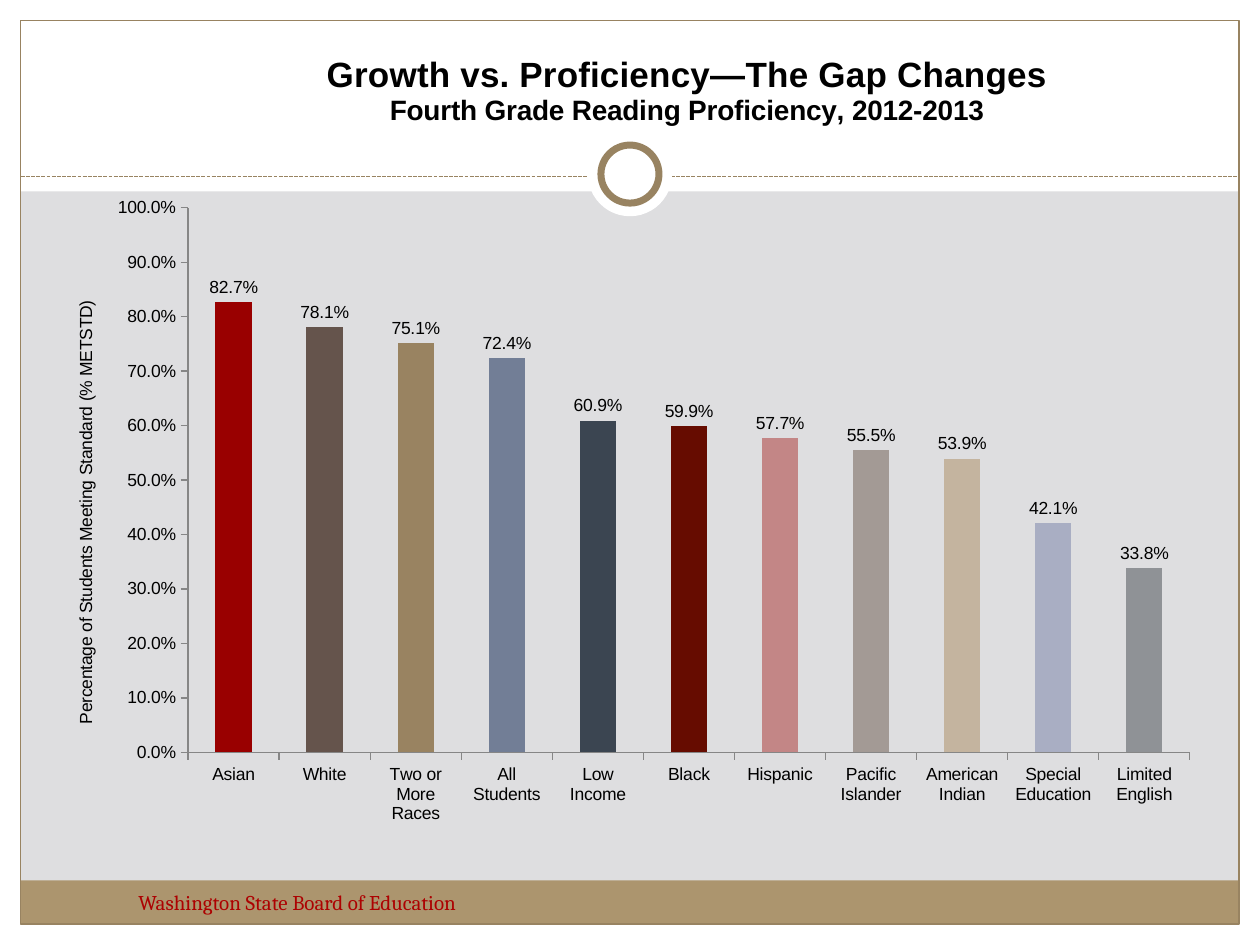
from lxml import etree
from pptx import Presentation
from pptx.chart.data import CategoryChartData
from pptx.dml.color import RGBColor
from pptx.enum.chart import XL_CHART_TYPE, XL_LABEL_POSITION, XL_TICK_MARK
from pptx.enum.dml import MSO_LINE
from pptx.enum.shapes import MSO_CONNECTOR, MSO_SHAPE
from pptx.oxml import parse_xml
from pptx.oxml.ns import nsdecls, qn
from pptx.util import Cm, Pt

RECTANGLE, OVAL = MSO_SHAPE.RECTANGLE, MSO_SHAPE.OVAL
STRAIGHT = MSO_CONNECTOR.STRAIGHT
DASHED = MSO_LINE.SQUARE_DOT
COLUMNS = XL_CHART_TYPE.COLUMN_CLUSTERED
ABOVE_BAR = XL_LABEL_POSITION.OUTSIDE_END
OUTWARD, NO_TICK = XL_TICK_MARK.OUTSIDE, XL_TICK_MARK.NONE

HEADING = "Growth vs. Proficiency—The Gap Changes"
SUBHEADING = "Fourth Grade Reading Proficiency, 2012-2013"
AXIS_CAPTION = "Percentage of Students Meeting Standard (% METSTD)"
FOOTER = "Washington State Board of Education"
GROUPS = [
    ("Asian", 0.827, "990000"),
    ("White", 0.781, "65544C"),
    ("Two or More Races", 0.751, "998361"),
    ("All Students", 0.724, "727E96"),
    ("Low Income", 0.609, "3B4551"),
    ("Black", 0.599, "660C00"),
    ("Hispanic", 0.577, "C38686"),
    ("Pacific Islander", 0.555, "A39A95"),
    ("American Indian", 0.539, "C4B49F"),
    ("Special Education", 0.421, "A9AEC3"),
    ("Limited English", 0.338, "8F9296"),
]
THEME = {
    "backdrop": "DEDEE0", "paper": "FFFFFF", "band": "AC956E", "frame": "988361",
    "ink": "000000", "footer": "AD0101", "axis": "868686",
    "sans": "Arial", "serif": "Cambria",
    "heading": 20, "subheading": 16, "footer_size": 12, "label": 10,
}
WIDTH, HEIGHT, MARGIN = 25.4, 19.05, 0.42
HEADER_HEIGHT, RULE_Y = 3.86, 3.56
RING_CENTER_Y = 3.51


def rgb(role):
    return RGBColor.from_string(THEME.get(role, role))


def format_font(font, size="label", color="ink", face="sans", bold=False):
    font.size, font.name, font.bold = Pt(THEME[size]), THEME[face], bold
    font.color.rgb = rgb(color)


def write(paragraph, text, **style):
    run = paragraph.add_run()
    run.text = text
    format_font(run.font, **style)


def draw(slide, kind, left, top, width, height, fill=None, line=None, weight=0.75):
    shape = slide.shapes.add_shape(kind, Cm(left), Cm(top), Cm(width), Cm(height))
    shape.shadow.inherit = False
    if fill:
        shape.fill.solid()
        shape.fill.fore_color.rgb = rgb(fill)
    else:
        shape.fill.background()
    if line:
        shape.line.color.rgb = rgb(line)
        shape.line.width = Pt(weight)
    else:
        shape.line.fill.background()


def draw_circle(slide, diameter, **look):
    draw(slide, OVAL, (WIDTH - diameter) / 2, RING_CENTER_Y - diameter / 2,
         diameter, diameter, **look)


def place(element, index, target=None, **fractions):
    for old in element.findall(qn("c:layout")):
        element.remove(old)
    goal = f'<c:layoutTarget val="{target}"/>' if target else ""
    modes = "".join(f'<c:{key}Mode val="edge"/>' for key in "xy")
    sizes = "".join(f'<c:{key} val="{value}"/>' for key, value in fractions.items())
    element.insert(index, parse_xml(
        f'<c:layout {nsdecls("c")}><c:manualLayout>{goal}{modes}{sizes}'
        "</c:manualLayout></c:layout>"))


def draw_frame(slide):
    inner_width, inner_height = WIDTH - 2 * MARGIN, HEIGHT - 2 * MARGIN
    for edge in [
        (0, HEIGHT - MARGIN, WIDTH, MARGIN),
        (0, 0, WIDTH, HEADER_HEIGHT),
        (0, 0, MARGIN, HEIGHT),
        (WIDTH - MARGIN, 0, MARGIN, HEIGHT),
    ]:
        draw(slide, RECTANGLE, *edge, fill="paper")
    draw(slide, RECTANGLE, MARGIN, 17.75, inner_width, 0.88, fill="band")
    draw(slide, RECTANGLE, MARGIN, MARGIN, inner_width, inner_height, line="frame")
    rule = slide.shapes.add_connector(
        STRAIGHT, Cm(MARGIN), Cm(RULE_Y), Cm(WIDTH - MARGIN), Cm(RULE_Y))
    rule.line.color.rgb = rgb("frame")
    rule.line.width = Pt(0.75)
    rule.line.dash_style = DASHED
    etree.SubElement(rule._element.spPr, qn("a:effectLst"))
    draw_circle(slide, 1.7, fill="paper")
    draw_circle(slide, 1.17, fill="paper", line="frame", weight=4)


def draw_chart(slide):
    names, shares, colors = zip(*GROUPS)
    results = CategoryChartData(number_format="0.0%")
    results.categories = names
    results.add_series("Series 1", shares)
    chart = slide.shapes.add_chart(
        COLUMNS, Cm(0.84), Cm(0.84), Cm(23.62), Cm(16.1), results).chart
    format_font(chart.font, face="serif")
    chart.has_legend = False

    title = chart.chart_title.text_frame
    write(title.paragraphs[0], HEADING, size="heading", bold=True)
    write(title.add_paragraph(), SUBHEADING, size="subheading", bold=True)
    place(chart.chart_title._element, 1, x=0.24, y=0.01)

    shares_axis, groups_axis = chart.value_axis, chart.category_axis
    for axis in (shares_axis, groups_axis):
        axis.has_major_gridlines = False
        axis.major_tick_mark, axis.minor_tick_mark = OUTWARD, NO_TICK
        axis.format.line.color.rgb = rgb("axis")
        format_font(axis.tick_labels.font)
    shares_axis.minimum_scale, shares_axis.maximum_scale = 0, 1
    shares_axis.major_unit = 0.1
    shares_axis.tick_labels.number_format = "0.0%"
    shares_axis.tick_labels.number_format_is_linked = False
    write(shares_axis.axis_title.text_frame.paragraphs[0], AXIS_CAPTION)
    place(shares_axis.axis_title._element, 1, x=0.025, y=0.32)
    place(shares_axis._element.getparent(), 0, target="inner",
          x=0.125, y=0.208, w=0.855, h=0.682)

    plot = chart.plots[0]
    plot.gap_width = 150
    plot.vary_by_categories = False
    plot.has_data_labels = True
    labels = plot.data_labels
    labels.show_value, labels.position = True, ABOVE_BAR
    labels.number_format, labels.number_format_is_linked = "0.0%", False
    format_font(labels.font)
    for index, color in enumerate(colors):
        bar = plot.series[0].points[index].format.fill
        bar.solid()
        bar.fore_color.rgb = rgb(color)


def main():
    """Build the reading proficiency slide."""
    deck = Presentation()
    deck.slide_width, deck.slide_height = Cm(WIDTH), Cm(HEIGHT)
    slide = deck.slides.add_slide(deck.slide_layouts[6])
    slide.background.fill.solid()
    slide.background.fill.fore_color.rgb = rgb("backdrop")
    draw_frame(slide)
    footer = slide.shapes.add_textbox(Cm(2.54), Cm(17.81), Cm(9.96), Cm(1.02)).text_frame
    footer.word_wrap = True
    write(footer.paragraphs[0], FOOTER, size="footer_size", color="footer", face="serif")
    draw_chart(slide)
    deck.save("out.pptx")


if __name__ == "__main__":
    main()
